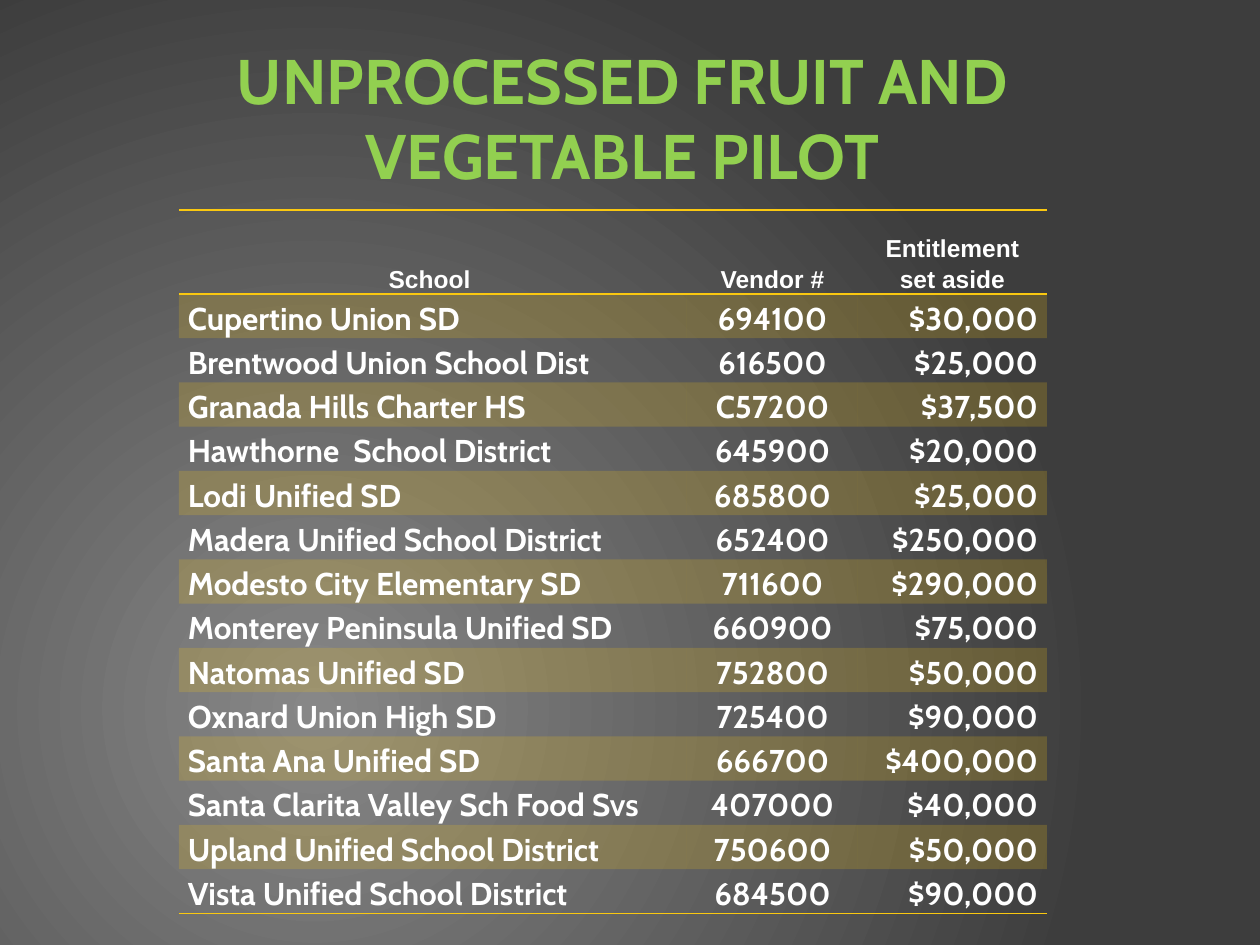
from dataclasses import dataclass

from pptx import Presentation
from pptx.dml.color import RGBColor
from pptx.enum.text import MSO_ANCHOR as Anchor, MSO_AUTO_SIZE as AutoSize, PP_ALIGN as Align
from pptx.oxml import parse_xml
from pptx.oxml.ns import nsdecls, qn
from pptx.util import Pt

PX = 914400 // 126  # EMU per px


@dataclass(frozen=True)
class Theme:
    title_color: str = "92D050"
    text_color: str = "FFFFFF"
    accent: str = "FAC810"
    glow: str = "878787"
    dark: str = "3D3D3D"
    font: str = "Cabin"
    header_font: str = "Arial"
    title_size: int = 36
    header_size: int = 14
    body_size: int = 18


theme = Theme()


def add_run(paragraph, text, font_name, size, color):
    run = paragraph.add_run()
    run.text = text
    run.font.name = font_name
    run.font.size = Pt(size)
    run.font.bold = True
    run.font.color.rgb = RGBColor.from_string(color)


def add_border(cell, side):
    # Border lines come before the fill in the cell properties
    line = parse_xml(
        f'<a:{side} {nsdecls("a")} w="12700"><a:solidFill>'
        f'<a:srgbClr val="{theme.accent}"/></a:solidFill></a:{side}>')
    properties = cell._tc.get_or_add_tcPr()
    properties.insert(len(properties.findall(qn("a:lnT"))), line)


presentation = Presentation()
presentation.slide_width = 1260 * PX
presentation.slide_height = 945 * PX
slide = presentation.slides.add_slide(presentation.slide_layouts[5])

# Background: radial glow at the lower left
slide.element.cSld.insert(0, parse_xml(
    f'<p:bg {nsdecls("p", "a")}><p:bgPr><a:gradFill rotWithShape="1"><a:gsLst>'
    f'<a:gs pos="0"><a:srgbClr val="{theme.glow}"/></a:gs>'
    f'<a:gs pos="100000"><a:srgbClr val="{theme.dark}"/></a:gs></a:gsLst>'
    '<a:path path="circle"><a:fillToRect l="50000" t="100000" r="100000" b="50000"/></a:path>'
    '</a:gradFill><a:effectLst/></p:bgPr></p:bg>'))

# Title
title = slide.shapes.title
title.left, title.top, title.width, title.height = (n * PX for n in (94, 38, 1071, 158))
frame = title.text_frame
frame.word_wrap = True
frame.auto_size = AutoSize.NONE
frame.vertical_anchor = Anchor.MIDDLE
frame.margin_left = frame.margin_right = 0
frame.margin_top = frame.margin_bottom = 6 * PX
paragraph = frame.paragraphs[0]
paragraph.alignment = Align.CENTER
add_run(paragraph, "UNPROCESSED FRUIT AND ", theme.font, theme.title_size, theme.title_color)
paragraph.add_line_break()
add_run(paragraph, "VEGETABLE PILOT ", theme.font, theme.title_size, theme.title_color)

# Table content
rows = [
    ("School ", "Vendor #", "Entitlement set aside"),
    ("Cupertino Union SD", "694100", "$30,000"),
    ("Brentwood Union School Dist", "616500", "$25,000"),
    ("Granada Hills Charter HS", "C57200", "$37,500"),
    ("Hawthorne  School District", "645900", "$20,000"),
    ("Lodi Unified SD", "685800", "$25,000"),
    ("Madera Unified School District", "652400", "$250,000"),
    ("Modesto City Elementary SD", "711600", "$290,000"),
    ("Monterey Peninsula Unified SD", "660900", "$75,000"),
    ("Natomas Unified SD", "752800", "$50,000"),
    ("Oxnard Union High SD", "725400", "$90,000"),
    ("Santa Ana Unified SD", "666700", "$400,000"),
    ("Santa Clarita Valley Sch Food Svs", "407000", "$40,000"),
    ("Upland Unified School District", "750600", "$50,000"),
    ("Vista Unified School District", "684500", "$90,000"),
]
column_widths = (508, 171, 189)
column_alignments = (Align.LEFT, Align.CENTER, Align.RIGHT)
header_height, row_height = 84, 42
table_height = header_height + row_height * (len(rows) - 1)

# Table without a built-in style
table_shape = slide.shapes.add_table(
    len(rows), len(column_widths), 179 * PX, 210 * PX,
    sum(column_widths) * PX, table_height * PX)
table = table_shape.table
table.horz_banding = False
table._tbl.tblPr.find(qn("a:tableStyleId")).text = "{2D5ABB26-0587-4C30-8999-92F81FD0307C}"
for column, width in zip(table.columns, column_widths):
    column.width = width * PX

# Cells: shaded odd rows, lines around the header and below the last row
for row_index, values in enumerate(rows):
    is_header = row_index == 0
    table.rows[row_index].height = (header_height if is_header else row_height) * PX
    for column_index, value in enumerate(values):
        cell = table.cell(row_index, column_index)
        cell.vertical_anchor = Anchor.BOTTOM
        cell.margin_left = cell.margin_right = 9 * PX
        cell.margin_top = cell.margin_bottom = 0
        paragraph = cell.text_frame.paragraphs[0]
        paragraph.alignment = Align.CENTER if is_header else column_alignments[column_index]
        paragraph.line_spacing = 1.15
        add_run(paragraph, value,
                theme.header_font if is_header else theme.font,
                theme.header_size if is_header else theme.body_size,
                theme.text_color)
        if row_index % 2:
            cell.fill.solid()
            cell.fill.fore_color.rgb = RGBColor.from_string(theme.accent)
            color = cell._tc.tcPr.find(".//" + qn("a:srgbClr"))
            color.append(parse_xml(f'<a:alpha {nsdecls("a")} val="20000"/>'))
        else:
            cell.fill.background()
        if is_header:
            add_border(cell, "lnT")
        if is_header or row_index == len(rows) - 1:
            add_border(cell, "lnB")

presentation.save("out.pptx")
